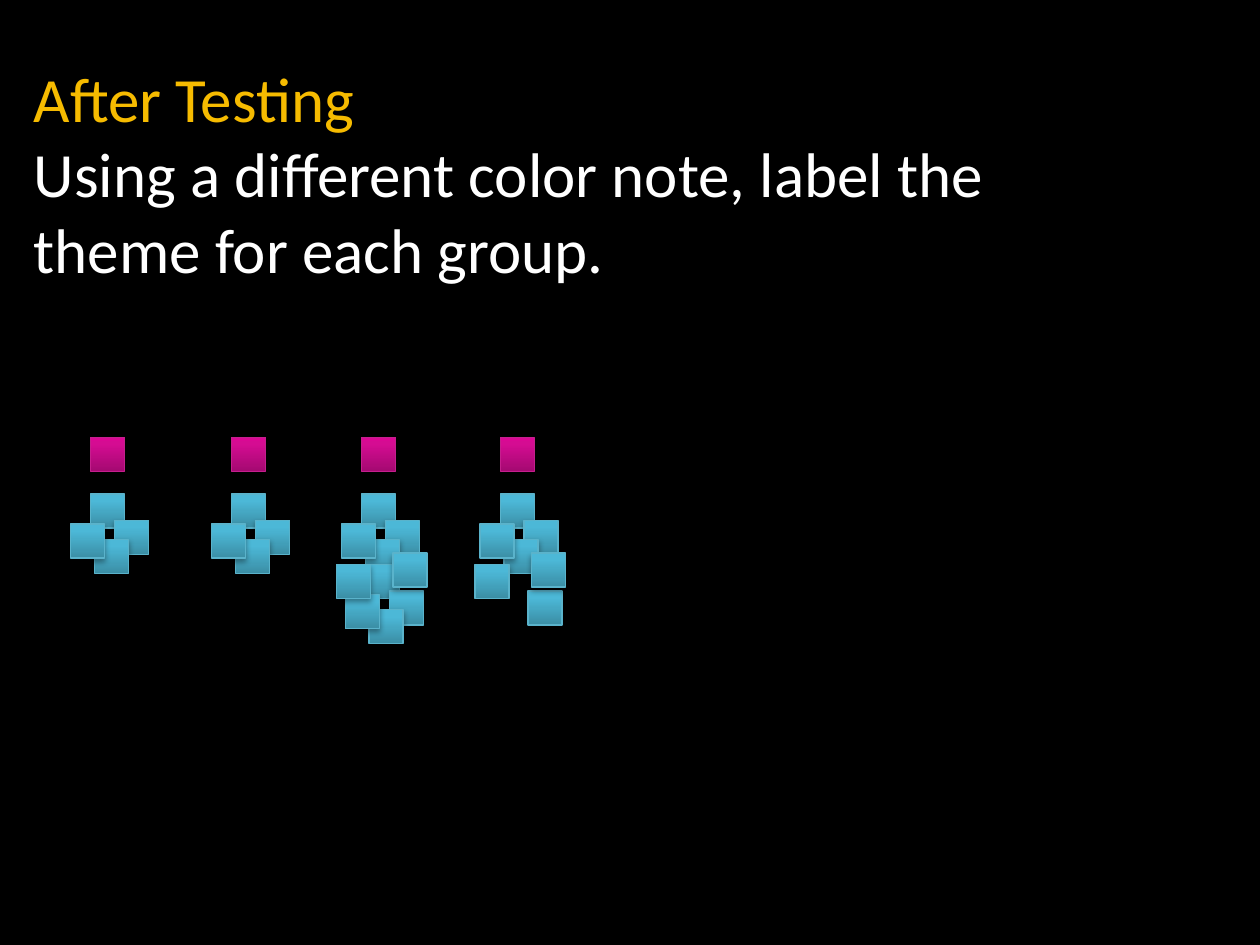
import copy

import pptx
import pptx.dml.color
import pptx.enum.shapes
import pptx.oxml
import pptx.oxml.ns
import pptx.util

# The slide is a grid of 1000 columns by 750 rows of square cells
COLUMNS, ROWS = 1000, 750
CELL = pptx.util.Inches(10) // COLUMNS
FONT = "Calibri"
NOTE = 27

# Gradient stops from bottom to top, then the outline
BLUE = ("3B8EA5", "4CB8D7", "4ABBDA"), "5AB3CB"
PINK = ("A40971", "D50C92", "DA0894"), "C41F8D"
STOPS = (0, 0.8, 1)

# Note offsets from the top left of a group
RING = [(0, 0), (19, 21), (3, 36), (-16, 24)]
SIDES = [(25, 47), (-20, 56)]
LOWER_RING = [(x + 3, y + 56) for x, y in RING]
GROUPS = [
    (72, RING),
    (184, RING),
    (287, RING + LOWER_RING + SIDES),
    (397, RING + LOWER_RING[1:2] + SIDES),
]
LABEL_ROW, GROUP_ROW = 347, 392

SHADOW = (
    '<a:outerShdw %s blurRad="40000" dist="23000" dir="5400000" rotWithShape="0">'
    '<a:srgbClr val="000000"><a:alpha val="35000"/></a:srgbClr></a:outerShdw>'
    % pptx.oxml.ns.nsdecls("a")
)


def rgb(value):
    return pptx.dml.color.RGBColor.from_string(value)


def add_heading(slide, left, top, width, height):
    box = slide.shapes.add_textbox(*(CELL * n for n in (left, top, width, height)))
    tf = box.text_frame
    tf.word_wrap = True
    tf.text = "After Testing\nUsing a different color note, label the theme for each group."
    for p, color in zip(tf.paragraphs, ("F6BB00", "FFFFFF")):
        font = p.runs[0].font
        font.name = FONT
        font.size = pptx.util.Pt(36)
        font.color.rgb = rgb(color)


def add_note(slide, left, top, palette):
    colors, outline = palette
    sp = slide.shapes.add_shape(
        pptx.enum.shapes.MSO_SHAPE.RECTANGLE,
        CELL * left, CELL * top, CELL * NOTE, CELL * NOTE)
    sp.line.color.rgb = rgb(outline)
    sp.line.width = pptx.util.Pt(0.75)

    # Three-stop gradient: the default has two stops
    sp.fill.gradient()
    sp.fill.gradient_angle = 90
    props = sp._element.spPr
    stop_list = props.find(".//" + pptx.oxml.ns.qn("a:gsLst"))
    stop_list.append(copy.deepcopy(stop_list[-1]))
    for stop, position, color in zip(sp.fill.gradient_stops, STOPS, colors):
        stop.position = position
        stop.color.rgb = rgb(color)

    # Soft shadow below
    sp.shadow.inherit = False
    effects = props.find(pptx.oxml.ns.qn("a:effectLst"))
    effects.append(pptx.oxml.parse_xml(SHADOW))


def add_group(slide, left, top, offsets, palette):
    for x, y in offsets:
        add_note(slide, left + x, top + y, palette)


def main():
    prs = pptx.Presentation()
    prs.slide_width = CELL * COLUMNS
    prs.slide_height = CELL * ROWS
    slide = prs.slides.add_slide(prs.slide_layouts[6])
    slide.background.fill.solid()
    slide.background.fill.fore_color.rgb = rgb("000000")

    add_heading(slide, 17, 42, 904, 67)

    # Grouped notes, then one theme label above each group
    for left, offsets in GROUPS:
        add_group(slide, left, GROUP_ROW, offsets, BLUE)
    for left, _ in GROUPS:
        add_note(slide, left, LABEL_ROW, PINK)

    prs.save("out.pptx")


if __name__ == "__main__":
    main()
